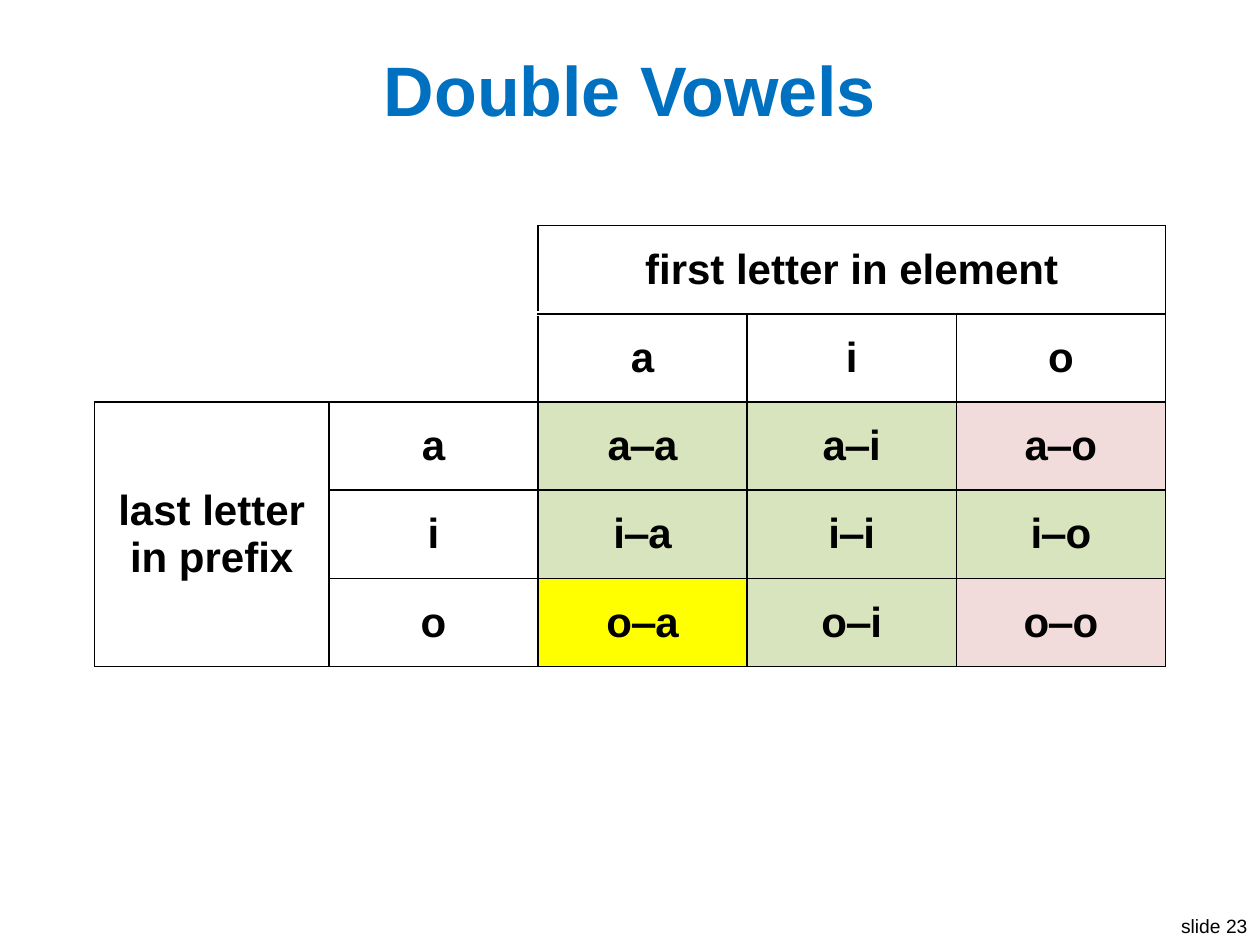
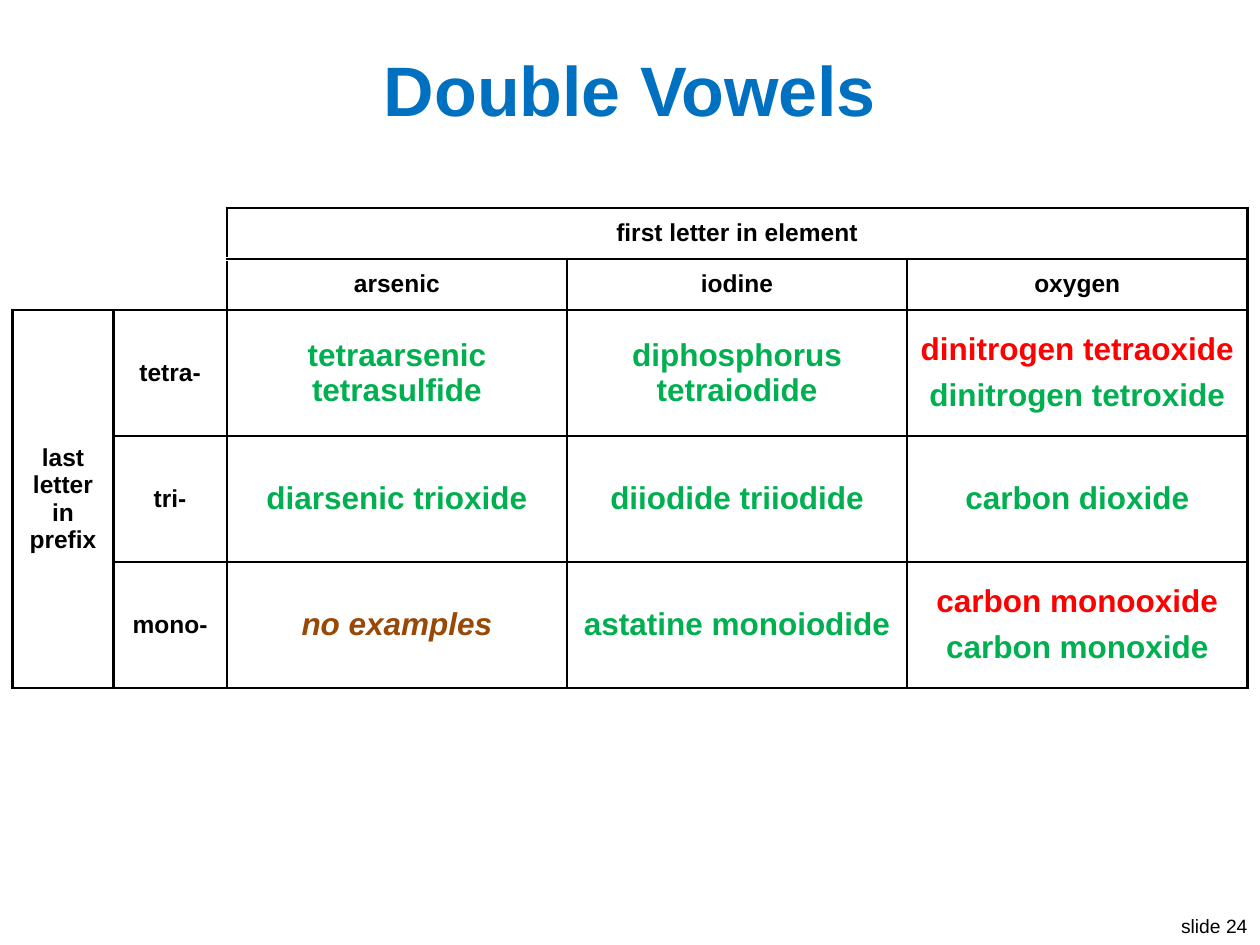
from dataclasses import dataclass

from lxml.etree import SubElement
from pptx import Presentation
from pptx.dml.color import RGBColor
from pptx.enum.text import MSO_ANCHOR, MSO_AUTO_SIZE, PP_ALIGN
from pptx.oxml.ns import qn
from pptx.util import Inches, Pt


@dataclass(frozen=True)
class Tone:
    size: float
    color: str
    bold: bool = True
    italic: bool = False


@dataclass(frozen=True)
class Theme:
    font: str = "Arial"
    ink: str = "000000"
    paper: str = "FFFFFF"
    keeps_both: str = "D7E4BD"
    drops_one: str = "F2DCDB"
    unclear: str = "FFFF00"
    title: Tone = Tone(40, "0070C0")
    footer: Tone = Tone(11, "000000", bold=False)
    letter: Tone = Tone(24, "000000")
    label: Tone = Tone(14, "000000")
    right: Tone = Tone(18, "00B050")
    wrong: Tone = Tone(18, "FF0000")
    missing: Tone = Tone(18, "984807", italic=True)


class Deck:
    COLUMNS, ROWS = 100, 75
    FIRST_NUMBER = 23

    def __init__(self, theme):
        self.theme = theme
        self.presentation = Presentation()
        self.presentation.slide_width = Inches(10)
        self.presentation.slide_height = Inches(7.5)
        self.slide = None

    def across(self, columns):
        return round(self.presentation.slide_width * columns / self.COLUMNS)

    def down(self, rows):
        return round(self.presentation.slide_height * rows / self.ROWS)

    def box(self, left, top, width, height):
        return self.across(left), self.down(top), self.across(width), self.down(height)

    def start(self, heading):
        layout = self.presentation.slide_layouts.get_by_name("Title Only")
        self.slide = self.presentation.slides.add_slide(layout)
        self.title(heading)
        number = self.FIRST_NUMBER + len(self.presentation.slides) - 1
        self.footer(f"slide {number}")

    def set_lines(self, frame, lines, align=PP_ALIGN.CENTER):
        for index, (words, tone) in enumerate(lines):
            paragraph = frame.add_paragraph() if index else frame.paragraphs[0]
            paragraph.alignment = align
            if index < len(lines) - 1:
                paragraph.space_after = Pt(6)
            run = paragraph.add_run()
            run.text = words
            run.font.name = self.theme.font
            run.font.size = Pt(tone.size)
            run.font.bold = tone.bold
            run.font.italic = tone.italic
            run.font.color.rgb = RGBColor.from_string(tone.color)

    def title(self, heading):
        holder = self.slide.shapes.title
        holder.left, holder.top, holder.width, holder.height = self.box(2, 3, 96, 8)
        holder.text_frame.vertical_anchor = MSO_ANCHOR.MIDDLE
        self.set_lines(holder.text_frame, [(heading, self.theme.title)])

    def footer(self, words):
        frame = self.slide.shapes.add_textbox(*self.box(92.5, 72.1, 7.5, 2.9)).text_frame
        frame.word_wrap = False
        frame.auto_size = MSO_AUTO_SIZE.SHAPE_TO_FIT_TEXT
        self.set_lines(frame, [(words, self.theme.footer)], PP_ALIGN.RIGHT)

    def border(self, cell, side, color, weight):
        line = SubElement(cell._tc.get_or_add_tcPr(), qn(f"a:ln{side}"), w=str(Pt(weight)))
        fill = SubElement(line, qn("a:solidFill"))
        SubElement(fill, qn("a:srgbClr"), val=color)

    def outline(self, cell, row, column, weight):
        black = (self.theme.ink, weight)
        sides = dict.fromkeys("LRTB", black)
        if row < 2 and column < 2:
            white = (self.theme.paper, 1)
            sides = {
                "L": white,
                "R": black if column == 1 else white,
                "T": white,
                "B": black if row == 1 else (self.theme.paper, 3),
            }
        for side, look in sides.items():
            self.border(cell, side, *look)

    def vowel_table(self, corner, widths, heights, weight, heads, stubs, body, head_tone, fills=None):
        place = self.box(*corner, sum(widths), sum(heights))
        table = self.slide.shapes.add_table(len(heights), len(widths), *place).table
        table.first_row = table.horz_banding = False
        for column, width in zip(table.columns, widths):
            column.width = self.across(width)
        for row, height in zip(table.rows, heights):
            row.height = self.down(height)

        texts = {
            (0, 2): [("first letter in element", head_tone)],
            (2, 0): [("last letter in prefix", head_tone)],
        }
        texts.update({(1, 2 + i): [(head, head_tone)] for i, head in enumerate(heads)})
        texts.update({(2 + i, 1): [(stub, head_tone)] for i, stub in enumerate(stubs)})
        for i, entries in enumerate(body):
            texts.update({(2 + i, 2 + j): lines for j, lines in enumerate(entries)})

        for row in range(len(heights)):
            for column in range(len(widths)):
                cell = table.cell(row, column)
                self.outline(cell, row, column, weight)
                cell.vertical_anchor = MSO_ANCHOR.MIDDLE
                if fills and row > 1 and column > 1:
                    cell.fill.solid()
                    cell.fill.fore_color.rgb = RGBColor.from_string(fills[row - 2][column - 2])
                else:
                    cell.fill.background()
                self.set_lines(cell.text_frame, texts.get((row, column), []))
        table.cell(0, 2).merge(table.cell(0, 4))
        table.cell(2, 0).merge(table.cell(4, 0))

    def save(self):
        self.presentation.save("out.pptx")


def letter_pairs(deck):
    theme = deck.theme
    vowels = "aio"
    keep, drop, unclear = theme.keeps_both, theme.drops_one, theme.unclear
    deck.start("Double Vowels")
    deck.vowel_table(
        corner=(7.5, 17.9),
        widths=[18.6] + [16.6] * 4,
        heights=[7] * 5,
        weight=1,
        heads=vowels,
        stubs=vowels,
        body=[[[(f"{last}‒{first}", theme.letter)] for first in vowels] for last in vowels],
        head_tone=theme.letter,
        fills=[[keep, keep, drop], [keep, keep, keep], [unclear, keep, drop]],
    )


def compound_names(deck):
    right, wrong, missing = deck.theme.right, deck.theme.wrong, deck.theme.missing
    deck.start("Double Vowels")
    deck.vowel_table(
        corner=(1, 16.5),
        widths=[8, 9] + [27] * 3,
        heights=[4.05] * 2 + [10] * 3,
        weight=1.5,
        heads=["arsenic", "iodine", "oxygen"],
        stubs=["tetra-", "tri-", "mono-"],
        body=[
            [
                [("tetraarsenic tetrasulfide", right)],
                [("diphosphorus tetraiodide", right)],
                [("dinitrogen tetraoxide", wrong), ("dinitrogen tetroxide", right)],
            ],
            [
                [("diarsenic trioxide", right)],
                [("diiodide triiodide", right)],
                [("carbon dioxide", right)],
            ],
            [
                [("no examples", missing)],
                [("astatine monoiodide", right)],
                [("carbon monooxide", wrong), ("carbon monoxide", right)],
            ],
        ],
        head_tone=deck.theme.label,
    )


def main():
    deck = Deck(Theme())
    letter_pairs(deck)
    compound_names(deck)
    deck.save()


if __name__ == "__main__":
    main()
